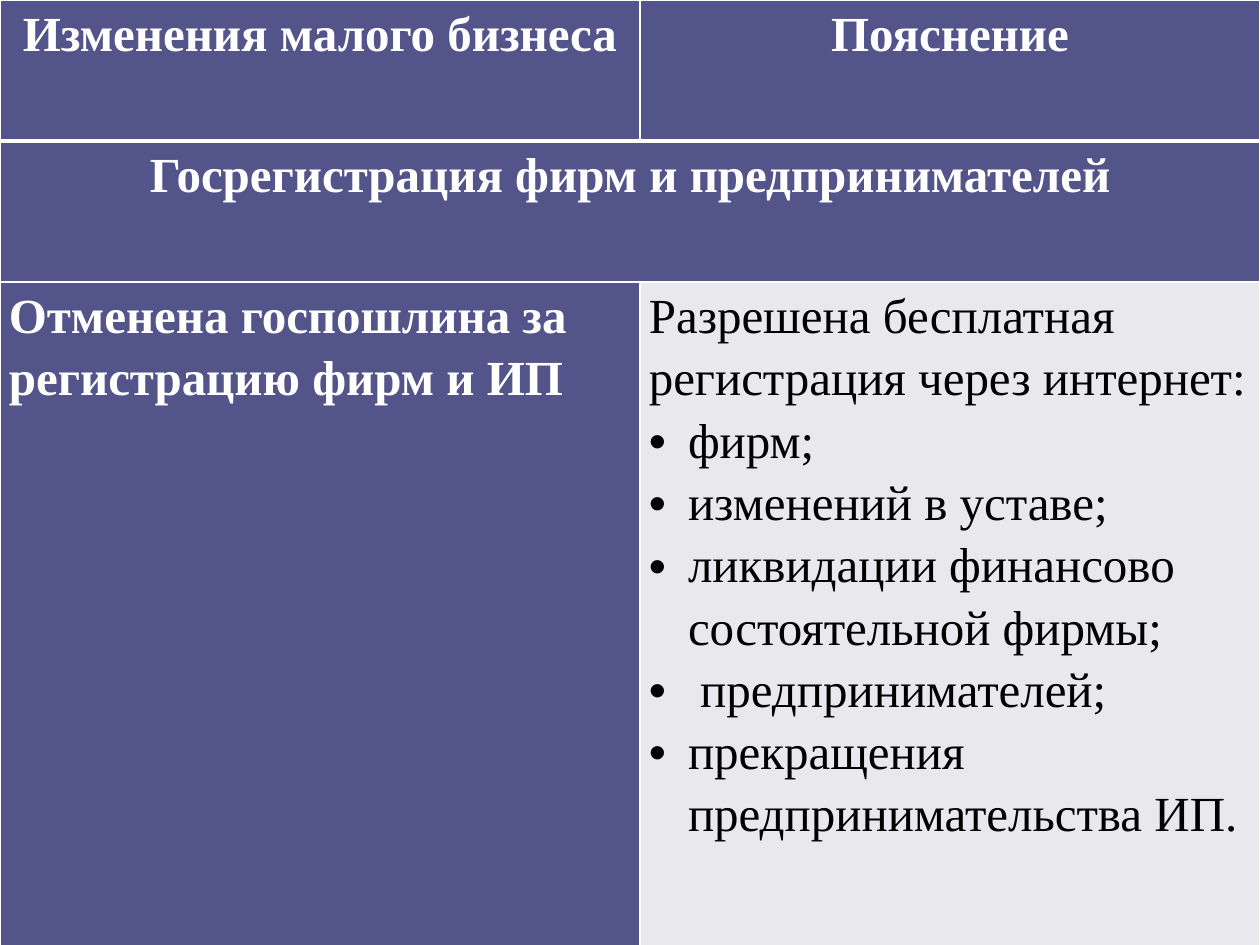
from lxml.etree import SubElement
from pptx import Presentation
from pptx.dml.color import RGBColor
from pptx.enum.text import PP_ALIGN
from pptx.oxml.ns import qn
from pptx.util import Cm, Pt

WHITE = RGBColor(0xFF, 0xFF, 0xFF)
BLACK = RGBColor(0, 0, 0)
BLUE = RGBColor(0x53, 0x54, 0x8A)
PALE = RGBColor(0xE9, 0xE9, 0xED)

HEAD = {"fill": BLUE, "ink": WHITE, "bold": True, "align": PP_ALIGN.CENTER}
SIDE = {**HEAD, "align": PP_ALIGN.LEFT}
BODY = {"fill": PALE, "ink": BLACK, "bold": False, "align": PP_ALIGN.LEFT}

COLS = [12.9, 12.5]
ROWS = [2.84, 2.84, 13.38]
CELLS = [
    (0, 0, HEAD, ["Изменения малого бизнеса"]),
    (0, 1, HEAD, ["Пояснение"]),
    (1, 0, HEAD, ["Госрегистрация фирм и предпринимателей"]),
    (2, 0, SIDE, ["Отменена госпошлина за регистрацию фирм и ИП"]),
    (2, 1, BODY, [
        "Разрешена бесплатная регистрация через интернет:",
        "• фирм;",
        "• изменений в уставе;",
        "• ликвидации финансово состоятельной фирмы;",
        "•  предпринимателей;",
        "• прекращения предпринимательства ИП.",
    ]),
]


class Deck:
    font = {"name": "Times New Roman", "size": Pt(28)}
    inset = {"margin_left": Cm(0.18), "margin_right": Cm(0.18),
             "margin_top": 0, "margin_bottom": 0}
    indent = Cm(0.79)

    def __init__(self, slide):
        self.slide = slide

    def table(self, cols, rows):
        frame = self.slide.shapes.add_table(
            len(rows), len(cols), 0, 0, Cm(sum(cols)), Cm(sum(rows)))
        grid = frame.table
        grid.first_row = grid.horz_banding = False
        for col, width in zip(grid.columns, cols):
            col.width = Cm(width)
        for row, height in zip(grid.rows, rows):
            row.height = Cm(height)
        return grid

    def border(self, cell, **widths):
        """Draw white cell borders; widths in points are keyed by L, R, T, B."""
        props = cell._tc.get_or_add_tcPr()
        for side in "LRTB":
            line = SubElement(props, qn(f"a:ln{side}"), w=str(Pt(widths.get(side, 1))))
            fill = SubElement(line, qn("a:solidFill"))
            SubElement(fill, qn("a:srgbClr"), val=str(WHITE))

    def bullet(self, para):
        props = para._p.get_or_add_pPr()
        props.set("marL", str(self.indent))
        props.set("indent", str(-self.indent))
        SubElement(props, qn("a:buFont"), typeface="Arial")
        SubElement(props, qn("a:buChar"), char="•")

    def cell(self, cell, look, lines):
        """Fill a cell with paragraphs; a line that starts with "• " is bulleted."""
        for key, value in self.inset.items():
            setattr(cell, key, value)
        frame = cell.text_frame
        for i, line in enumerate(lines):
            para = frame.add_paragraph() if i else frame.paragraphs[0]
            if line.startswith("• "):
                self.bullet(para)
            para.alignment = look["align"]
            para.line_spacing = 1.15
            run = para.add_run()
            run.text = line.removeprefix("• ")
            for key, value in {**self.font, "bold": look["bold"]}.items():
                setattr(run.font, key, value)
            run.font.color.rgb = look["ink"]
        cell.fill.solid()
        cell.fill.fore_color.rgb = look["fill"]


def main():
    show = Presentation()
    show.slide_width, show.slide_height = Cm(25.4), Cm(19.05)
    deck = Deck(show.slides.add_slide(show.slide_layouts[6]))

    grid = deck.table(COLS, ROWS)
    grid.cell(1, 0).merge(grid.cell(1, 1))
    rules = [{"B": 3}, {"T": 3}, {}]
    for row, rule in zip(grid.rows, rules):
        for cell in row.cells:
            deck.border(cell, **rule)
    for row, col, look, lines in CELLS:
        deck.cell(grid.cell(row, col), look, lines)

    show.save("out.pptx")


if __name__ == "__main__":
    main()
